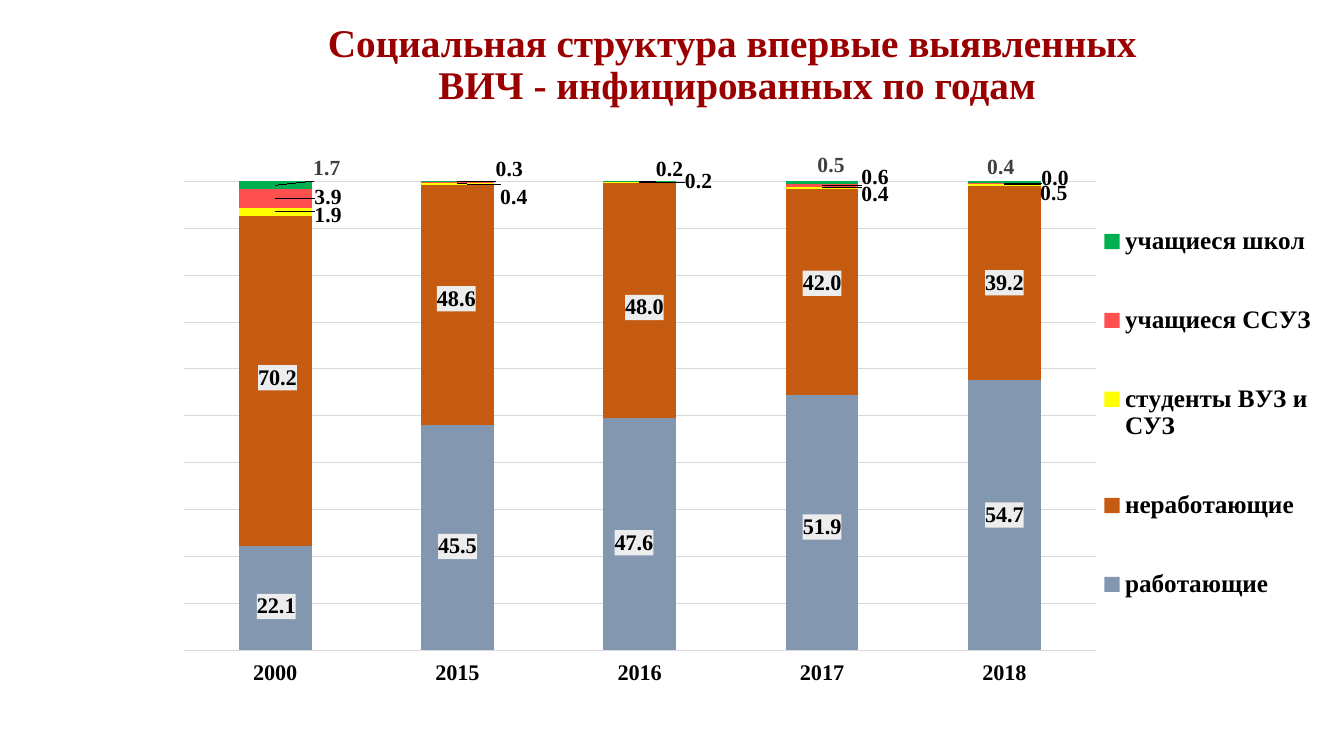
from dataclasses import dataclass
from pptx import Presentation
from pptx.chart.data import CategoryChartData
from pptx.dml.color import RGBColor
from pptx.enum.chart import XL_CHART_TYPE, XL_LEGEND_POSITION, XL_TICK_MARK
from pptx.enum.text import MSO_ANCHOR, PP_ALIGN
from pptx.oxml import parse_xml
from pptx.oxml.ns import nsdecls
from pptx.util import Inches, Pt


@dataclass(frozen=True)
class Theme:
    font: str = "Times New Roman"
    base_font: str = "Calibri"
    title: str = "9A0000"
    text: str = "000000"
    muted: str = "404040"
    grid: str = "D9D9D9"
    label_fill: str = "EDEDED"
    working: str = "8497B0"
    jobless: str = "C55A11"
    students: str = "FFFF00"
    college: str = "FF5050"
    school: str = "00B050"
    title_size: float = 28
    legend_size: float = 18
    label_size: float = 15.9
    small_size: float = 15.4
    base_size: float = 10


@dataclass(frozen=True)
class Group:
    name: str
    values: tuple
    color: str
    label_size: float
    label_color: str
    label_fill: str
    shifts: dict
    hidden: tuple = ()


THEME = Theme()
COLUMNS, ROWS = 160, 90
CELL = Inches(1 / 12)
YEARS = ("2000", "2015", "2016", "2017", "2018")
LARGE = (THEME.label_size, THEME.text, THEME.label_fill)
SMALL = (THEME.small_size, THEME.text, None)
MUTED = (THEME.small_size, THEME.muted, None)
GROUPS = (
    Group("работающие", (22.1, 45.5, 47.6, 51.9, 54.7), THEME.working, *LARGE,
          {0: (1, 13), 1: (0, 14), 2: (-5, 14), 3: (0, 7)}),
    Group("неработающие", (70.2, 48.6, 48, 42, 39.2), THEME.jobless, *LARGE,
          {0: (2, -6), 1: (-1, -10), 2: (4, 11), 3: (0, -14)}),
    Group("студенты ВУЗ и СУЗ", (1.9, 0.4, 0.2, 0.4, 0.5), THEME.students, *SMALL,
          {0: (46, 5), 1: (49, 22), 2: (51, -2), 3: (46, 10), 4: (43, 14)}),
    Group("учащиеся ССУЗ", (3.9, 0.3, 0.2, 0.6, 0.04), THEME.college, *SMALL,
          {0: (46, -2), 1: (45, -21), 2: (26, -20), 3: (46, -13), 4: (44, -8)}),
    Group("учащиеся школ", (1.7, 0.01, 0.03, 0.5, 0.4), THEME.school, *MUTED,
          {0: (45, -27), 3: (8, -28), 4: (-3, -25)}, hidden=(1, 2)),
)


def chart_xml(tag, body):
    return parse_xml(f'<c:{tag} {nsdecls("c", "a")}>{body}</c:{tag}>')


def layout_xml(x, y, width=None, height=None, inner=False):
    parts = ['<c:layoutTarget val="inner"/>'] if inner else []
    if width:
        parts += ['<c:xMode val="edge"/>', '<c:yMode val="edge"/>']
    sizes = {"x": x, "y": y, "w": width, "h": height}
    parts += [f'<c:{key} val="{size / 1000}"/>'
              for key, size in sizes.items() if size is not None]
    return chart_xml("layout", f'<c:manualLayout>{"".join(parts)}</c:manualLayout>')


class SlideBuilder:
    def __init__(self, theme):
        self.theme = theme
        self.deck = Presentation()
        self.deck.slide_width = Inches(13.33)
        self.deck.slide_height = Inches(7.5)
        self.page = self.deck.slides.add_slide(self.deck.slide_layouts[6])

    def place(self, *cells):
        return [int(cell * CELL) for cell in cells]

    def style(self, font, size, color, bold=True, name=None):
        font.name = name or self.theme.font
        font.size = Pt(size)
        font.bold = bold
        font.color.rgb = RGBColor.from_string(color)

    def title(self, text, *cells):
        box = self.page.shapes.add_textbox(*self.place(*cells))
        frame = box.text_frame
        frame.word_wrap = True
        frame.vertical_anchor = MSO_ANCHOR.MIDDLE
        frame.text = text
        para = frame.paragraphs[0]
        para.alignment = PP_ALIGN.CENTER
        para.line_spacing = 0.9
        for span in para.runs:
            self.style(span.font, self.theme.title_size, self.theme.title)

    def stacked_chart(self, years, groups, *cells):
        data = CategoryChartData(number_format="0.0")
        data.categories = years
        for group in groups:
            data.add_series(group.name, group.values)
        chart = self.page.shapes.add_chart(
            XL_CHART_TYPE.COLUMN_STACKED_100, *self.place(*cells), data).chart
        chart.has_title = False
        self.style(chart.font, self.theme.base_size, self.theme.text, False,
                   self.theme.base_font)
        plot = chart.plots[0]
        plot.gap_width = 150
        plot.overlap = 100
        plot.vary_by_categories = False
        for series, group in zip(plot.series, groups):
            series.format.fill.solid()
            series.format.fill.fore_color.rgb = RGBColor.from_string(group.color)
            self.labels(series, group)
        self.axes(chart)
        self.legend(chart)
        area = chart._chartSpace.chart.plotArea
        for old in area.xpath("c:layout"):
            area.remove(old)
        area.insert(0, layout_xml(10, 58, 789, 753, inner=True))

    def labels(self, series, group):
        labels = series.data_labels
        labels.show_value = True
        labels.number_format = "0.0"
        labels.number_format_is_linked = False
        self.style(labels.font, group.label_size, group.label_color)
        for index in group.shifts:
            self.style(series.points[index].data_label.font,
                       group.label_size, group.label_color)
        root = labels._element
        for label in root.xpath("c:dLbl"):
            shift = group.shifts[int(label.xpath("c:idx")[0].get("val"))]
            for old in label.xpath("c:spPr"):
                label.remove(old)
            number = parse_xml(
                f'<c:numFmt {nsdecls("c")} formatCode="0.0" sourceLinked="0"/>')
            label.insert(1, layout_xml(*shift))
            label.insert(2, number)
            if group.label_fill:
                label.insert(3, self.label_background(group.label_fill))
        if group.label_fill:
            root.xpath("c:numFmt")[0].addnext(self.label_background(group.label_fill))
        for index in reversed(group.hidden):
            position = sum(key < index for key in group.shifts)
            root.insert(position, chart_xml(
                "dLbl", f'<c:idx val="{index}"/><c:delete val="1"/>'))

    def label_background(self, color):
        return chart_xml(
            "spPr", f'<a:solidFill><a:srgbClr val="{color}"/></a:solidFill>')

    def axes(self, chart):
        years = chart.category_axis
        years.format.line.fill.background()
        years.major_tick_mark = XL_TICK_MARK.OUTSIDE
        self.style(years.tick_labels.font, self.theme.label_size, self.theme.text)
        shares = chart.value_axis
        shares.visible = False
        shares.has_major_gridlines = True
        line = shares.major_gridlines.format.line
        line.width = Pt(0.58)
        line.color.rgb = RGBColor.from_string(self.theme.grid)

    def legend(self, chart):
        chart.has_legend = True
        legend = chart.legend
        legend.position = XL_LEGEND_POSITION.RIGHT
        legend.include_in_layout = False
        self.style(legend.font, self.theme.legend_size, self.theme.text)
        root = legend._element
        for old in root.xpath("c:layout"):
            root.remove(old)
        root.xpath("c:legendPos")[0].addnext(layout_xml(801, 50, 190, 760))


def main():
    builder = SlideBuilder(THEME)
    builder.title("Социальная структура впервые выявленных\v ВИЧ - инфицированных по годам",
                  14.28, 0, COLUMNS - 14.28, 15.72)
    builder.stacked_chart(YEARS, GROUPS, 20.52, 17.28, 137.52, ROWS - 15.84)
    builder.deck.save("out.pptx")


if __name__ == "__main__":
    main()
